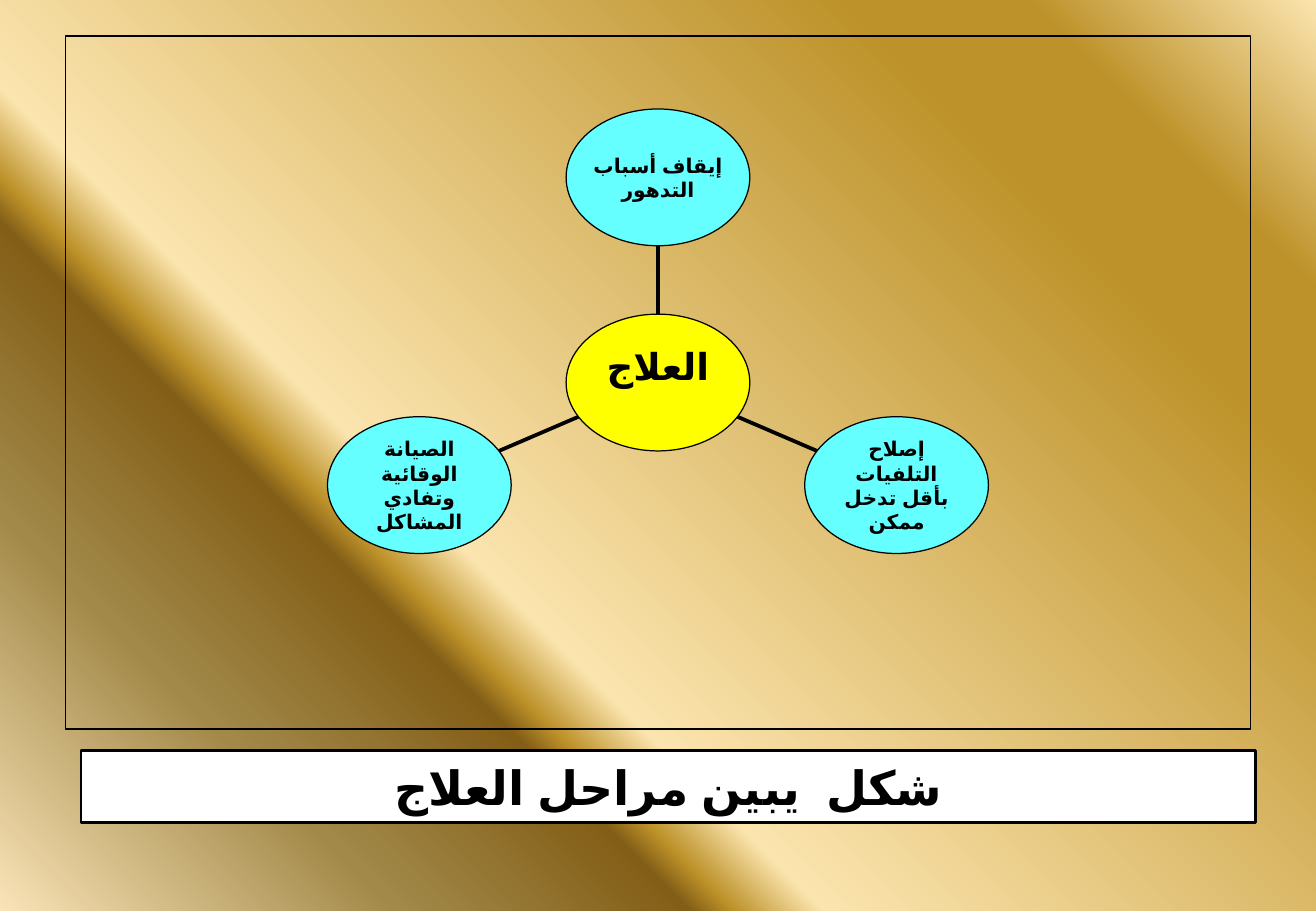
from copy import deepcopy
from math import cos, radians, sin

from lxml.etree import SubElement
from pptx import Presentation
from pptx.dml.color import RGBColor
from pptx.enum.lang import MSO_LANGUAGE_ID
from pptx.enum.shapes import MSO_CONNECTOR, MSO_SHAPE
from pptx.enum.text import MSO_ANCHOR, PP_ALIGN
from pptx.oxml.ns import qn
from pptx.util import Cm, Pt

COLORS = {"ink": "000000", "hub": "FFFF00", "stage": "66FFFF", "caption": "FFFFFF"}
GOLD_STOPS = [
    (0, "FAE3B7"), (18, "A28949"), (31, "835E17"), (33, "BD922A"),
    (37, "FBE4AE"), (79, "BD922A"), (87, "BD922A"), (100, "FBE4AE"),
]
FONT = "Arial"
RADIUS_X, RADIUS_Y = 1.92, 1.43
STAGES = [
    (150, "الصيانة الوقائية وتفادي المشاكل"),
    (30, "إصلاح التلفيات بأقل تدخل ممكن"),
    (-90, "إيقاف أسباب التدهور"),
]


def color(name):
    return RGBColor.from_string(COLORS[name])


def paint_background(slide):
    fill = slide.background.fill
    fill.gradient()
    fill.gradient_angle = 45
    stop_list = slide.element.find(".//" + qn("a:gsLst"))
    template = deepcopy(stop_list[0])
    for stop in list(stop_list):
        stop_list.remove(stop)
    for percent, value in GOLD_STOPS:
        stop = deepcopy(template)
        stop.set("pos", str(percent * 1000))
        for child in list(stop):
            stop.remove(child)
        SubElement(stop, qn("a:srgbClr"), val=value)
        stop_list.append(stop)


def add_outline(slide, preset, box, line_width, fill=None):
    shape = slide.shapes.add_shape(preset, *(Cm(length) for length in box))
    shape.shadow.inherit = False
    if fill:
        shape.fill.solid()
        shape.fill.fore_color.rgb = color(fill)
    else:
        shape.fill.background()
    shape.line.color.rgb = color("ink")
    shape.line.width = Pt(line_width)
    return shape


def write_text(shape, text, *, size, margin=0, bottom=0):
    """Write bold, centred, right-to-left text in the middle of the shape."""
    frame = shape.text_frame
    frame.word_wrap = True
    frame.vertical_anchor = MSO_ANCHOR.MIDDLE
    frame.margin_left = frame.margin_right = frame.margin_top = Cm(margin)
    frame.margin_bottom = Cm(bottom)
    para = frame.paragraphs[0]
    para.alignment = PP_ALIGN.CENTER
    para._p.get_or_add_pPr().set("rtl", "1")
    span = para.add_run()
    span.text = text
    span.font.name = FONT
    span.font.size = Pt(size)
    span.font.bold = True
    span.font.language_id = MSO_LANGUAGE_ID.ARABIC
    span.font.color.rgb = color("ink")
    SubElement(span._r.get_or_add_rPr(), qn("a:cs"), typeface=FONT)


def add_spoke(slide, start, end):
    spoke = slide.shapes.add_connector(
        MSO_CONNECTOR.STRAIGHT, *(Cm(length) for length in (*start, *end)))
    spoke.line.color.rgb = color("ink")
    spoke.line.width = Pt(2.25)
    SubElement(spoke._element.spPr, qn("a:effectLst"))


def add_ellipse(slide, center, fill, text, **text_format):
    x, y = center
    box = (x - RADIUS_X, y - RADIUS_Y, 2 * RADIUS_X, 2 * RADIUS_Y)
    ellipse = add_outline(slide, MSO_SHAPE.OVAL, box, 0.75, fill)
    write_text(ellipse, text, **text_format)


def add_radial_diagram(slide, box):
    """Frame the box and set the stages around a hub, three radii from its centre."""
    left, top, width, height = box
    add_outline(slide, MSO_SHAPE.RECTANGLE, box, 1)
    hub_x, hub_y = left + width / 2, top + height / 2
    for angle, text in STAGES:
        step_x = RADIUS_X * cos(radians(angle))
        step_y = RADIUS_Y * sin(radians(angle))
        hub_edge, stage_edge, stage_center = (
            (hub_x + step_x * count, hub_y + step_y * count) for count in (1, 2, 3))
        add_spoke(slide, hub_edge, stage_edge)
        add_ellipse(slide, stage_center, "stage", text, size=12)
    add_ellipse(slide, (hub_x, hub_y), "hub", "العلاج", size=22, bottom=0.7)


def add_caption(slide, box):
    caption = add_outline(slide, MSO_SHAPE.RECTANGLE, box, 1.5, "caption")
    write_text(caption, "شكل  يبين مراحل العلاج", size=28, margin=0.13, bottom=0.13)


def main():
    deck = Presentation()
    deck.slide_width, deck.slide_height = Cm(27.51), Cm(19.05)
    page = deck.slides.add_slide(deck.slide_layouts[6])
    paint_background(page)
    add_radial_diagram(page, (1.37, 0.76, 24.77, 14.48))
    add_caption(page, (1.69, 15.7, 24.56, 1.5))
    deck.save("out.pptx")


if __name__ == "__main__":
    main()
